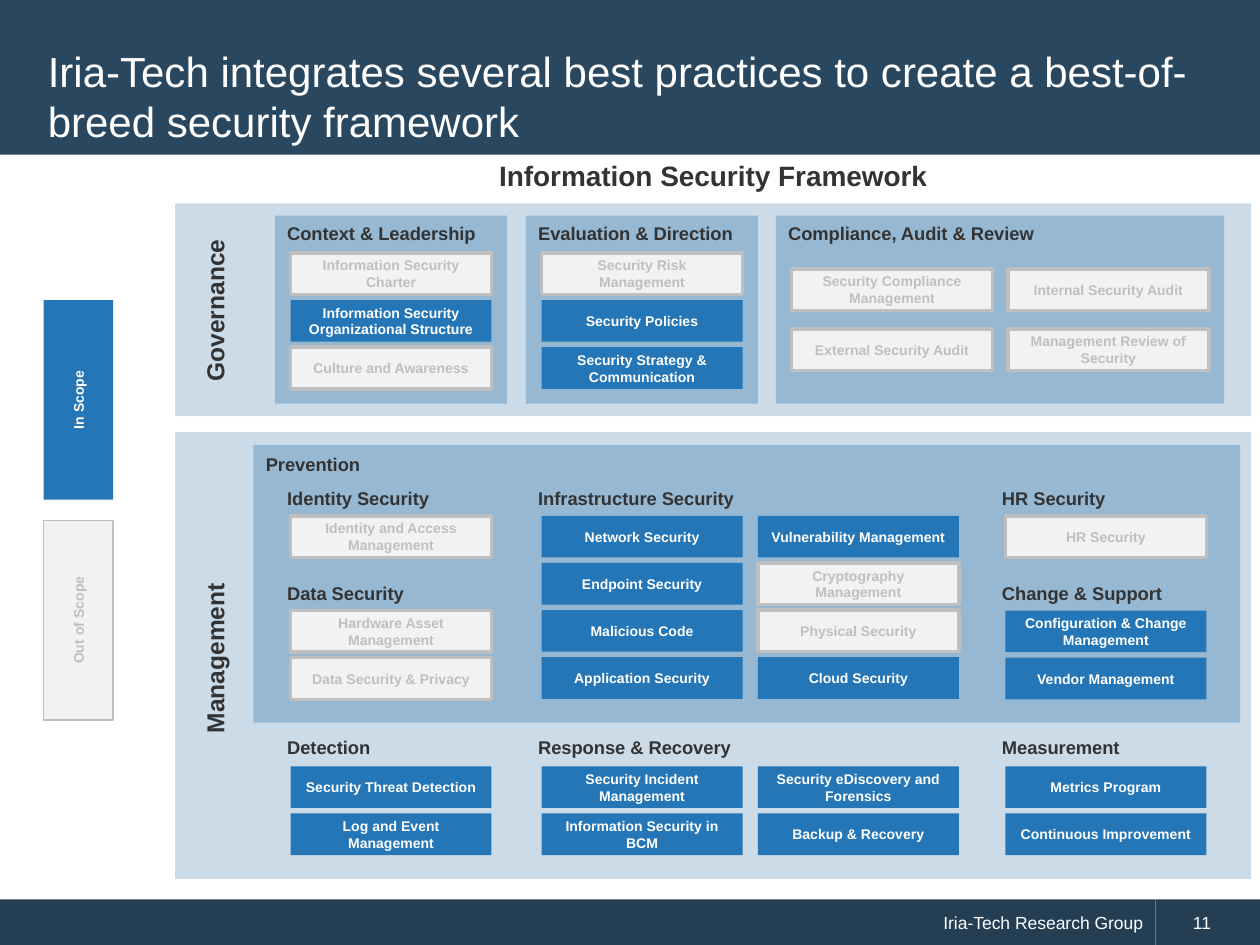
from pptx import Presentation
from pptx import util as u
from pptx.dml.color import RGBColor
from pptx.enum import shapes, text

THEME = {
    "font": "Arial",
    "header": "29475F", "footer": "243F54", "band": "CBDBE7", "panel": "96B8D2",
    "in": "2576B7", "out": "F2F2F2", "out_line": "BFBFBF",
    "dark": "333333", "white": "FFFFFF",
    "title_pt": 24, "diagram_pt": 16, "side_pt": 14,
    "heading_pt": 10.5, "footer_pt": 10, "box_pt": 8,
}
LEFT, CENTER, RIGHT = text.PP_ALIGN.LEFT, text.PP_ALIGN.CENTER, text.PP_ALIGN.RIGHT

prs = Presentation()
prs.slide_width, prs.slide_height = u.Cm(25.4), u.Cm(19.05)
slide = prs.slides.add_slide(prs.slide_layouts[5])


def write(shape, words, size, color, bold=True, align=CENTER, anchor=text.MSO_ANCHOR.MIDDLE):
    frame = shape.text_frame
    frame.text = words
    paragraph = frame.paragraphs[0]
    frame_format = {"word_wrap": True, "vertical_anchor": anchor,
                    "auto_size": text.MSO_AUTO_SIZE.NONE}
    font_format = {"name": THEME["font"], "size": u.Pt(THEME[size]), "bold": bold}
    for target, values in ((frame, frame_format), (paragraph.runs[0].font, font_format)):
        for key, value in values.items():
            setattr(target, key, value)
    paragraph.alignment = align
    paragraph.runs[0].font.color.rgb = RGBColor.from_string(THEME[color])


def block(x, y, w, h, fill, line_pt=0):
    shape = slide.shapes.add_shape(shapes.MSO_SHAPE.RECTANGLE, *map(u.Cm, (x, y, w, h)))
    shape.shadow.inherit = False
    shape.fill.solid()
    shape.fill.fore_color.rgb = RGBColor.from_string(THEME[fill])
    if line_pt:
        shape.line.color.rgb = RGBColor.from_string(THEME["out_line"])
        shape.line.width = u.Pt(line_pt)
    else:
        shape.line.fill.background()
    return shape


# Header band, kept behind the title
header = block(0, 0, 25.4, 3.12, "header")
slide.shapes._spTree.insert(2, header._element)
title = slide.shapes.title
for side, value in {"left": 0.71, "top": 0.71, "width": 23.95, "height": 2.44}.items():
    setattr(title, side, u.Cm(value))
write(title, "Iria-Tech integrates several best practices to create a best-of-breed security framework",
      "title_pt", "white", bold=False, align=LEFT)

# Footer
publisher = block(0, 18.13, 23.29, 0.92, "footer")
write(publisher, "Iria-Tech Research Group", "footer_pt", "white", bold=False, align=RIGHT)
page = block(23.29, 18.13, 2.11, 0.92, "footer")
write(page, "11", "footer_pt", "white", bold=False, align=LEFT)
page.text_frame.margin_left = u.Cm(0.76)

# Governance and management bands with their inner panels
for x, y, w, h, fill in (
    (3.53, 4.1, 21.69, 4.29, "band"),
    (3.53, 8.71, 21.69, 9.01, "band"),
    (5.54, 4.35, 4.68, 3.79, "panel"),
    (10.6, 4.35, 4.68, 3.79, "panel"),
    (15.64, 4.35, 9.04, 3.79, "panel"),
    (5.11, 8.97, 19.89, 5.6, "panel"),
):
    block(x, y, w, h, fill)

# Diagram title and rotated band names
for words, x, y, w, h, size, turn in (
    ("Information Security Framework", 7.32, 3.07, 14.12, 0.94, "diagram_pt", 0),
    ("Governance", 2.24, 5.46, 4.17, 1.6, "side_pt", 270),
    ("Management", -0.08, 12.47, 8.81, 1.6, "side_pt", 270),
):
    label = slide.shapes.add_textbox(*map(u.Cm, (x, y, w, h)))
    label.rotation = turn
    write(label, words, size, "dark")

# Topics: heading, left, heading top, first box top, row pitch, columns of boxes.
# A leading "-" marks a box that is out of scope.
COL = (5.86, 10.92, 15.28, 20.27)
BOX_W, BOX_H, PITCH = 4.05, 0.84, 0.95
COLUMN_STEP = COL[2] - COL[1]
HEADING_INSET = 0.32
topics = (
    ("Context & Leadership", COL[0], 4.35, 5.1, PITCH,
     [["-Information Security Charter", "Information Security Organizational Structure",
       "-Culture and Awareness"]]),
    ("Evaluation & Direction", COL[1], 4.35, 5.1, PITCH,
     [["-Security Risk Management", "Security Policies", "Security Strategy & Communication"]]),
    ("Compliance, Audit & Review", 15.96, 4.35, 5.42, 1.21,
     [["-Security Compliance Management", "-External Security Audit"],
      ["-Internal Security Audit", "-Management Review of Security"]]),
    ("Prevention", 5.43, 9.01, 9.01, PITCH, []),
    ("Identity Security", COL[0], 9.69, 10.4, PITCH, [["-Identity and Access Management"]]),
    ("Data Security", COL[0], 11.62, 12.31, PITCH,
     [["-Hardware Asset Management", "-Data Security & Privacy"]]),
    ("Infrastructure Security", COL[1], 9.69, 10.4, PITCH,
     [["Network Security", "Endpoint Security", "Malicious Code", "Application Security"],
      ["Vulnerability Management", "-Cryptography Management", "-Physical Security",
       "Cloud Security"]]),
    ("HR Security", COL[3], 9.69, 10.4, PITCH, [["-HR Security"]]),
    ("Change & Support", COL[3], 11.62, 12.31, PITCH,
     [["Configuration & Change Management", "Vendor Management"]]),
    ("Detection", COL[0], 14.71, 15.45, PITCH,
     [["Security Threat Detection", "Log and Event Management"]]),
    ("Response & Recovery", COL[1], 14.71, 15.45, PITCH,
     [["Security Incident Management", "Information Security in BCM"],
      ["Security eDiscovery and Forensics", "Backup & Recovery"]]),
    ("Measurement", COL[3], 14.71, 15.45, PITCH,
     [["Metrics Program", "Continuous Improvement"]]),
)
for name, left, heading_top, first_top, pitch, columns in topics:
    heading = slide.shapes.add_textbox(
        *map(u.Cm, (left - HEADING_INSET, heading_top, 5.8, 0.67)))
    write(heading, name, "heading_pt", "dark", align=LEFT, anchor=text.MSO_ANCHOR.TOP)
    for c, column in enumerate(columns):
        for r, practice in enumerate(column):
            outside = practice.startswith("-")
            box = block(left + c * COLUMN_STEP, first_top + r * pitch, BOX_W, BOX_H,
                        "out" if outside else "in", 2 if outside else 0)
            write(box, practice.lstrip("-"), "box_pt", "out_line" if outside else "white")

# Scope legend, turned to read upwards
for words, top, fill, color, line_pt in (
    ("In Scope", 7.36, "in", "white", 0),
    ("Out of Scope", 11.8, "out", "out_line", 1),
):
    key = block(-0.43, top, 4.02, 1.4, fill, line_pt)
    key.rotation = 270
    write(key, words, "box_pt", color)

prs.save("out.pptx")
